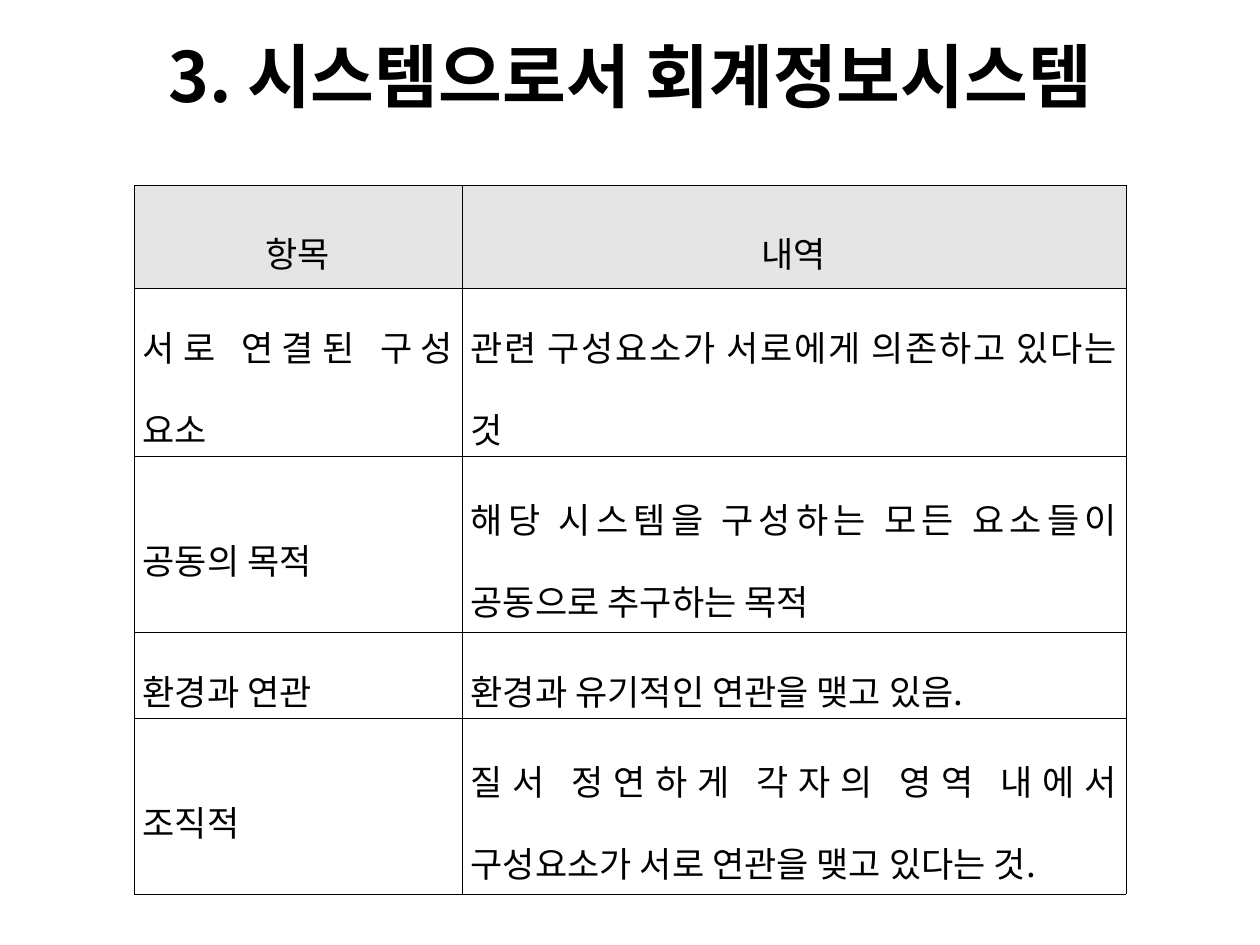
from lxml import etree
from pptx import Presentation
from pptx import util as u
from pptx.dml.color import RGBColor
from pptx.enum import text
from pptx.oxml.ns import qn

PX = 914400 // 126
FONT = "Noto Sans CJK KR"
COLORS = {"ink": "000000", "header": "E5E5E5", "page": "FFFFFF"}

COL_WIDTHS = [328, 664]
ROW_HEIGHTS = [103, 168, 176, 86, 176]
ROWS = [
    ("항목", "내역"),
    ("서로 연결된 구성 요소", "관련 구성요소가 서로에게 의존하고 있다는 것"),
    ("공동의 목적", "해당 시스템을 구성하는 모든 요소들이 공동으로 추구하는 목적"),
    ("환경과 연관", "환경과 유기적인 연관을 맺고 있음."),
    ("조직적", "질서 정연하게 각자의 영역 내에서 구성요소가 서로 연관을 맺고 있다는 것."),
]


def px(n):
    return u.Emu(n * PX)


def rgb(name):
    return RGBColor.from_string(COLORS[name])


def add_run(p, content, size, bold=False):
    r = p.add_run()
    r.text = content
    r.font.size = u.Pt(size)
    r.font.bold = bold
    r.font.name = FONT
    r.font.color.rgb = rgb("ink")
    etree.SubElement(r.font._element, qn("a:ea"), typeface=FONT)


def add_title(s, content, x, y, w, h, size):
    tf = s.shapes.add_textbox(px(x), px(y), px(w), px(h)).text_frame
    tf.word_wrap = True
    tf.vertical_anchor = text.MSO_ANCHOR.MIDDLE
    p = tf.paragraphs[0]
    p.alignment = text.PP_ALIGN.CENTER
    add_run(p, content, size, bold=True)
    # The title ends in a line break, at the same size
    p.add_line_break()
    sz = str(round(size * 100))
    etree.SubElement(p._p.find(qn("a:br")), qn("a:rPr"), sz=sz)
    etree.SubElement(p._p, qn("a:endParaRPr"), sz=sz)


def set_borders(cell, width):
    tc_pr = cell._tc.get_or_add_tcPr()
    for i, side in enumerate(("lnL", "lnR", "lnT", "lnB")):
        ln = etree.Element(qn("a:" + side), w=str(u.Pt(width)))
        fill = etree.SubElement(ln, qn("a:solidFill"))
        etree.SubElement(fill, qn("a:srgbClr"), val=COLORS["ink"])
        tc_pr.insert(i, ln)  # borders come before the fill


def fill_cell(cell, content, is_header):
    cell.fill.solid()
    cell.fill.fore_color.rgb = rgb("header" if is_header else "page")
    set_borders(cell, 0.28)
    cell.vertical_anchor = text.MSO_ANCHOR.MIDDLE
    cell.margin_left = cell.margin_right = u.Inches(0.07)
    cell.margin_top = cell.margin_bottom = u.Inches(0.02)
    p = cell.text_frame.paragraphs[0]
    p.alignment = text.PP_ALIGN.CENTER if is_header else text.PP_ALIGN.JUSTIFY
    p.line_spacing = 1.6
    add_run(p, content, 20)


def add_grid(s, x, y):
    table = s.shapes.add_table(
        len(ROWS), len(COL_WIDTHS), px(x), px(y),
        px(sum(COL_WIDTHS)), px(sum(ROW_HEIGHTS))).table
    table.horz_banding = False
    for column, width in zip(table.columns, COL_WIDTHS):
        column.width = px(width)
    for i, (row, height) in enumerate(zip(table.rows, ROW_HEIGHTS)):
        row.height = px(height)
        for cell, content in zip(row.cells, ROWS[i]):
            fill_cell(cell, content, is_header=i == 0)


def main():
    prs = Presentation()
    prs.slide_width, prs.slide_height = px(1260), px(945)
    s = prs.slides.add_slide(prs.slide_layouts[6])

    # Title
    add_title(s, "3. 시스템으로서 회계정보시스템", 63, 38, 1134, 157, 39.6)

    # Table of system properties
    add_grid(s, 134, 185)

    prs.save("out.pptx")


if __name__ == "__main__":
    main()
